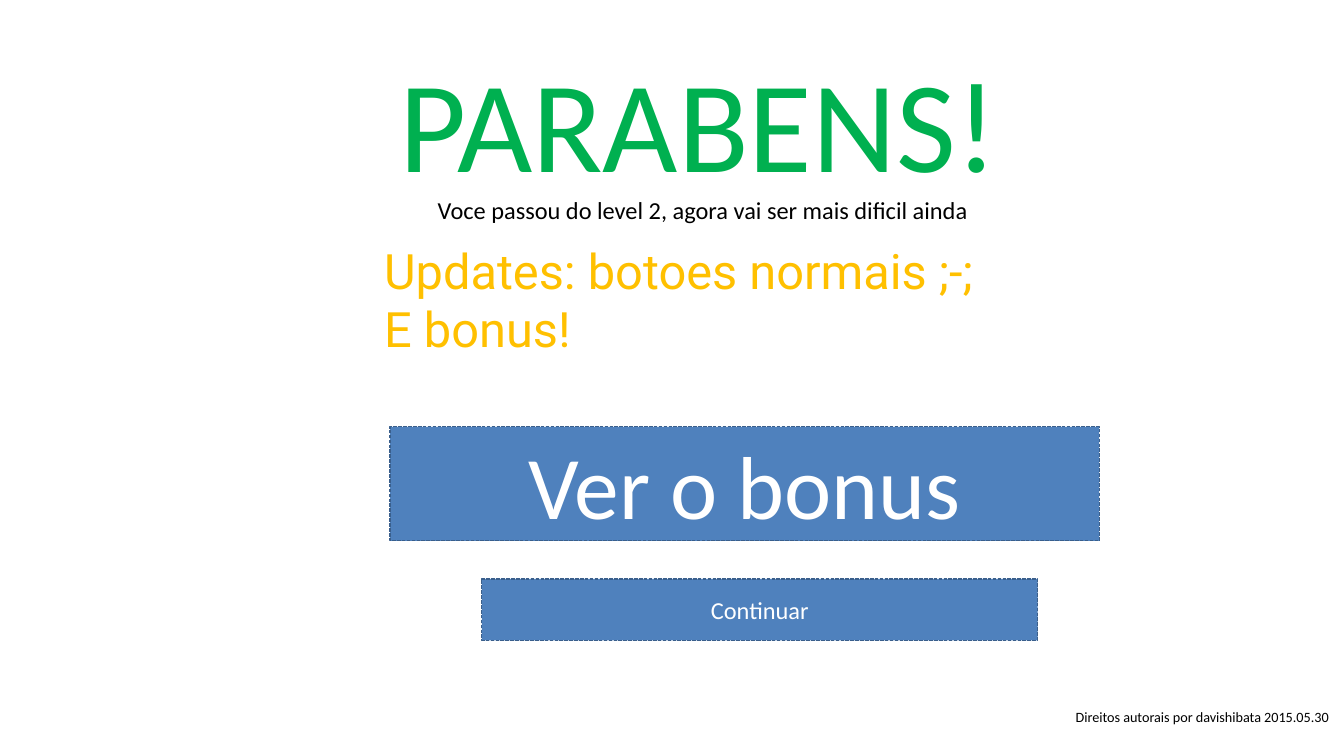
import dataclasses

import pptx
import pptx.dml.color
import pptx.enum.dml
import pptx.enum.shapes
import pptx.enum.text
import pptx.util

Pt = pptx.util.Pt
RGBColor = pptx.dml.color.RGBColor


@dataclasses.dataclass(frozen=True)
class Theme:
    body_font: str = "Calibri"
    update_font: str = "Roboto"
    black: str = "000000"
    white: str = "FFFFFF"
    green: str = "00B050"
    gold: str = "FFC000"
    button_fill: str = "4F81BD"
    button_line: str = "3A5F8C"
    button_line_width: float = 0.9
    credit_size: float = 10.5
    body_size: float = 18
    update_size: float = 36
    bonus_size: float = 66
    title_size: float = 96


class SlideBuilder:
    def __init__(self, slide, theme):
        self.slide = slide
        self.theme = theme

    def fill_frame(self, frame, lines, size, color, font=None, align=None):
        """Fill a text frame with one paragraph for each line."""
        font_format = {"size": Pt(size), "name": font or self.theme.body_font}
        for index, line in enumerate(lines):
            para = frame.paragraphs[0] if index == 0 else frame.add_paragraph()
            para.alignment = align
            span = para.add_run()
            span.text = line
            for name, value in font_format.items():
                setattr(span.font, name, value)
            span.font.color.rgb = RGBColor.from_string(color)

    def text(self, bounds, lines, size, color, font=None):
        box = self.slide.shapes.add_textbox(*map(Pt, bounds))
        frame_format = {
            "word_wrap": False,
            "auto_size": pptx.enum.text.MSO_AUTO_SIZE.SHAPE_TO_FIT_TEXT,
        }
        for name, value in frame_format.items():
            setattr(box.text_frame, name, value)
        self.fill_frame(box.text_frame, lines, size, color, font)

    def button(self, bounds, label, size):
        box = self.slide.shapes.add_shape(
            pptx.enum.shapes.MSO_SHAPE.RECTANGLE, *map(Pt, bounds))
        box.shadow.inherit = False
        box.fill.solid()
        box.fill.fore_color.rgb = RGBColor.from_string(self.theme.button_fill)
        box.line.color.rgb = RGBColor.from_string(self.theme.button_line)
        line_format = {
            "width": Pt(self.theme.button_line_width),
            "dash_style": pptx.enum.dml.MSO_LINE.SQUARE_DOT,
        }
        for name, value in line_format.items():
            setattr(box.line, name, value)
        box.text_frame.vertical_anchor = pptx.enum.text.MSO_ANCHOR.MIDDLE
        self.fill_frame(box.text_frame, [label], size, self.theme.white,
                        align=pptx.enum.text.PP_ALIGN.CENTER)


def main():
    theme = Theme()
    deck = pptx.Presentation()
    deck.slide_width, deck.slide_height = Pt(992.16), Pt(540)
    page = SlideBuilder(deck.slides.add_slide(deck.slide_layouts[6]), theme)

    page.text((786.96, 519.84, 205.2, 20.16),
              ["Direitos autorais por davishibata 2015.05.30"],
              theme.credit_size, theme.black)
    page.text((288, 28.08, 460.8, 123.84), ["PARABENS!"],
              theme.title_size, theme.green)
    page.text((316.08, 140.4, 410.4, 28.8),
              ["Voce passou do level 2, agora vai ser mais dificil ainda"],
              theme.body_size, theme.black)
    page.text((276.48, 174.24, 524.88, 94.32),
              ["Updates: botoes normais ;-;", "E bonus!"],
              theme.update_size, theme.gold, theme.update_font)
    page.button((288, 315.36, 523.44, 84.24), "Ver o bonus", theme.bonus_size)
    page.button((355.68, 427.68, 410.4, 45.36), "Continuar", theme.body_size)

    deck.save("out.pptx")


if __name__ == "__main__":
    main()
